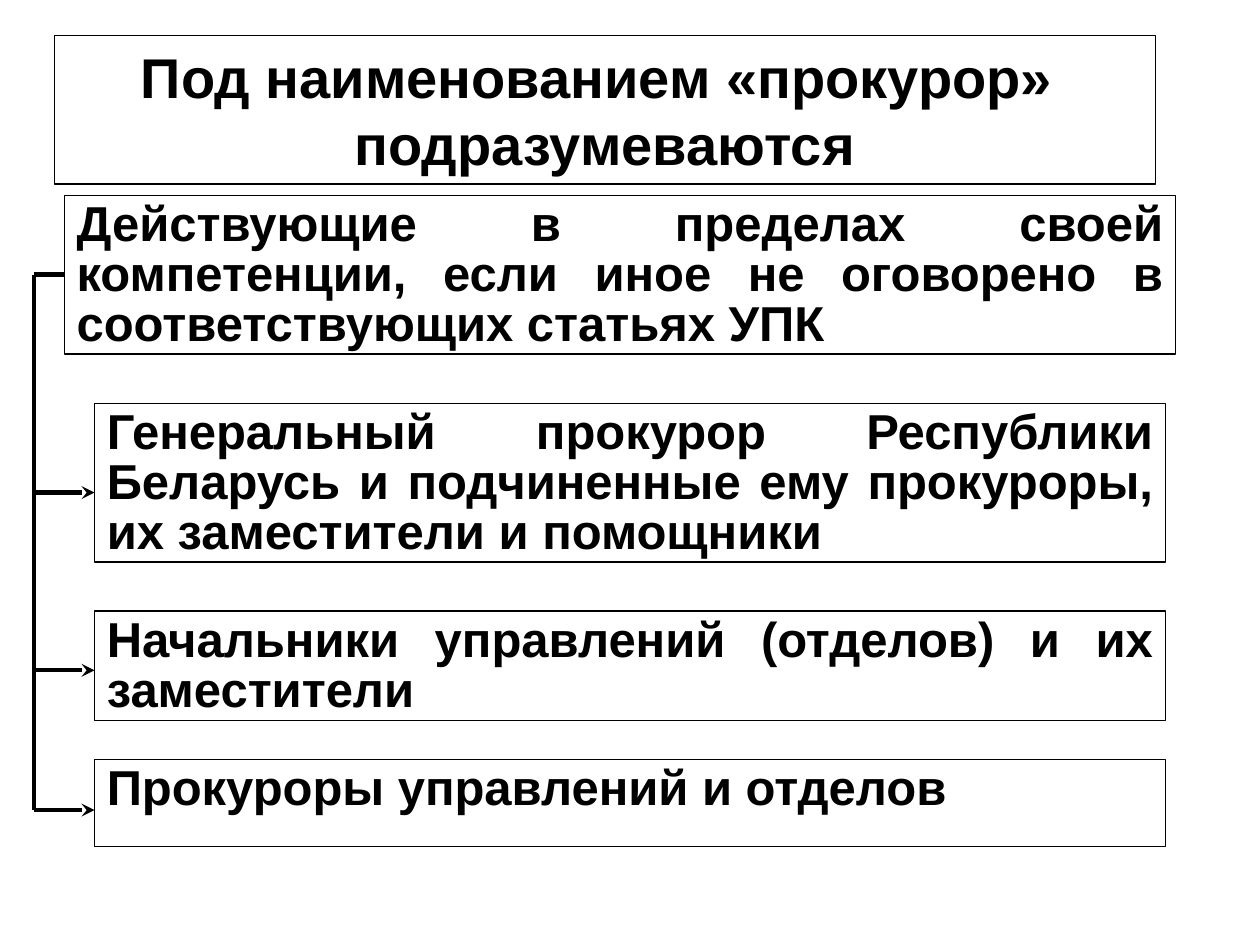
"""Build the slide that explains who is meant by the term «прокурор»."""
from typing import NamedTuple, Optional

from lxml import etree
from pptx import Presentation
from pptx import util as u
from pptx.dml.color import RGBColor
from pptx.enum import shapes, text
from pptx.oxml.ns import qn

W, H = u.Inches(10), u.Inches(7.5)
BLACK, WHITE = "000000", "FFFFFF"
TRUNK_X = 2.7
ITEM_X, ITEM_W = 7.5, 85


class Box(NamedTuple):
    """A framed text, placed in percent of the slide's width and height."""
    left: float
    top: float
    width: float
    height: float
    lines: tuple[str, ...]
    arrow_y: Optional[float] = None


TITLE = Box(4.3, 3.73, 87.4, 15.73, ("Под наименованием «прокурор» ", "подразумеваются"))
SCOPE = Box(5.1, 20.67, 88.2, 16.8, (
    "Действующие в пределах своей компетенции, если иное не оговорено в соответствующих статьях УПК",))
ITEMS = (
    Box(ITEM_X, 42.67, ITEM_W, 16.8, (
        "Генеральный прокурор Республики Беларусь и подчиненные ему прокуроры, их заместители и помощники",), 52.13),
    Box(ITEM_X, 64.67, ITEM_W, 11.6, ("Начальники управлений (отделов) и их заместители",), 70.93),
    Box(ITEM_X, 80.4, ITEM_W, 9.2, ("Прокуроры управлений и отделов",), 85.73),
)


def rgb(value: str) -> RGBColor:
    """Turn a hex string into a colour."""
    return RGBColor.from_string(value)


def px(share: float) -> int:
    """Turn a percentage of the slide's width into a length."""
    return round(W * share / 100)


def py(share: float) -> int:
    """Turn a percentage of the slide's height into a length."""
    return round(H * share / 100)


def frame(sp, box: Box, size: int, align, anchor, spacing: Optional[float] = None) -> None:
    """Place a shape, frame it and fill it with bold text."""
    sp.left, sp.top = px(box.left), py(box.top)
    sp.width, sp.height = px(box.width), py(box.height)
    sp.fill.solid()
    sp.fill.fore_color.rgb = rgb(WHITE)
    sp.line.color.rgb = rgb(BLACK)
    sp.line.width = u.Pt(0.75)
    tf = sp.text_frame
    tf.text = "\n".join(box.lines)
    tf.word_wrap = True
    tf.auto_size = text.MSO_AUTO_SIZE.NONE
    tf.vertical_anchor = anchor
    for p in tf.paragraphs:
        p.alignment = align
        p.line_spacing = spacing
        p.font.name = "Arial"
        p.font.size = u.Pt(size)
        p.font.bold = True
        p.font.color.rgb = rgb(BLACK)


def add_box(s, box: Box):
    """Add a rectangle with justified text."""
    sp = s.shapes.add_shape(shapes.MSO_SHAPE.RECTANGLE, 0, 0, 0, 0)
    sp.shadow.inherit = False
    frame(sp, box, 28, text.PP_ALIGN.JUSTIFY, text.MSO_ANCHOR.TOP, 0.85)
    return sp


def add_line(s, x1: float, y1: float, x2: float, y2: float, arrow: bool = False):
    """Add a straight line, with an arrowhead at its end if asked."""
    cn = s.shapes.add_connector(shapes.MSO_CONNECTOR.STRAIGHT, px(x1), py(y1), px(x2), py(y2))
    cn.line.color.rgb = rgb(BLACK)
    cn.line.width = u.Pt(2.5)
    if arrow:
        etree.SubElement(cn.line._get_or_add_ln(), qn("a:tailEnd"), type="stealth")
    etree.SubElement(cn._element.spPr, qn("a:effectLst"))
    return cn


def main() -> None:
    """Build and save the slide."""
    prs = Presentation()
    prs.slide_width, prs.slide_height = W, H
    s = prs.slides.add_slide(prs.slide_layouts[5])
    frame(s.shapes.title, TITLE, 32, text.PP_ALIGN.CENTER, text.MSO_ANCHOR.MIDDLE)
    scope = add_box(s, SCOPE)
    for item in ITEMS:
        add_box(s, item)
    for item in ITEMS:
        add_line(s, TRUNK_X, item.arrow_y, item.left, item.arrow_y, arrow=True)
    start_y = SCOPE.top + SCOPE.height / 2
    add_line(s, SCOPE.left, start_y, TRUNK_X, start_y).begin_connect(scope, 1)
    add_line(s, TRUNK_X, start_y, TRUNK_X, ITEMS[-1].arrow_y)
    prs.save("out.pptx")


if __name__ == "__main__":
    main()
